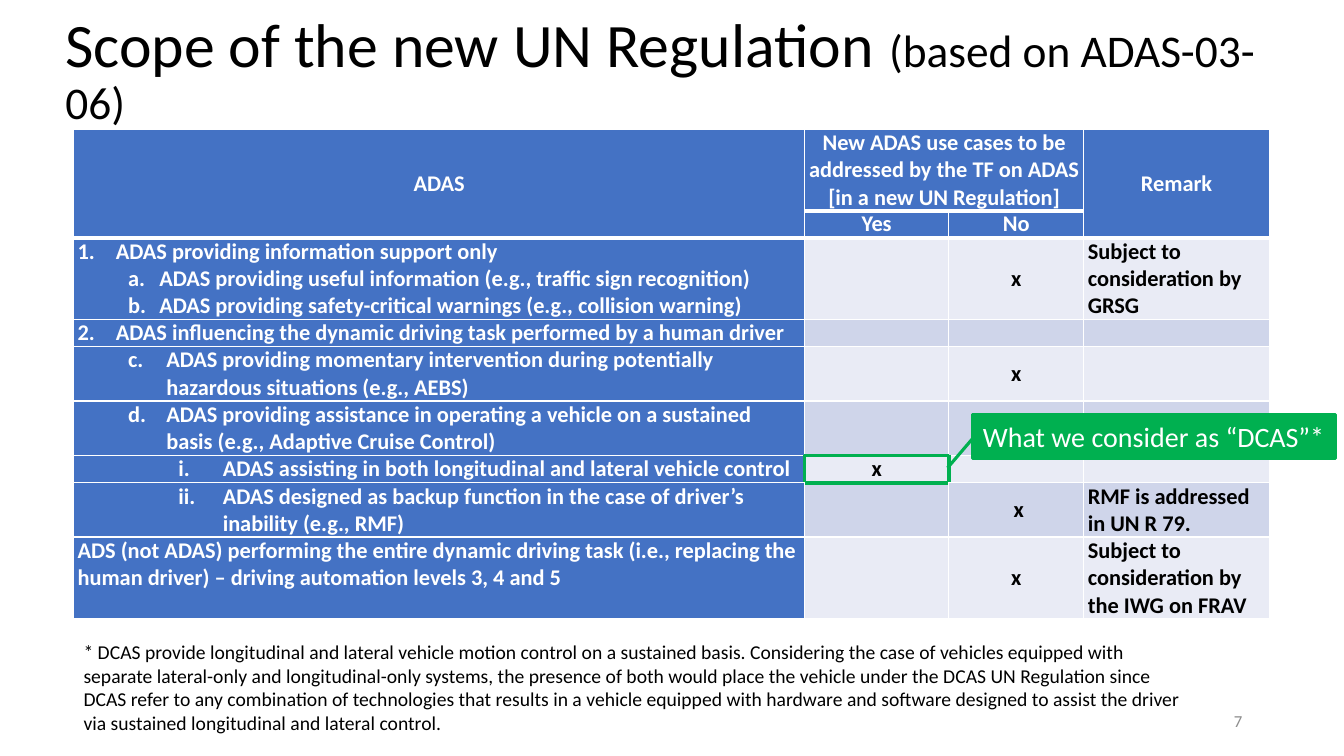
from lxml.etree import SubElement
from pptx import Presentation
from pptx.dml.color import RGBColor
from pptx.enum.shapes import MSO_SHAPE
from pptx.enum.text import MSO_ANCHOR, PP_ALIGN
from pptx.oxml.ns import qn
from pptx.util import Emu, Pt

EMU_PER_PX = 9144  # 100 px to the inch
WHITE, BLACK, BLUE, GREEN = "FFFFFF", "000000", "4472C4", "00B050"
BANDS = ("E9EBF5", "CFD5EA")
LINE_HEIGHT = 27
MIDDLE, TOP = MSO_ANCHOR.MIDDLE, MSO_ANCHOR.TOP

COLUMNS = (725, 143, 134, 184)
LINES_PER_ROW = (3, 1, 3, 1, 2, 2, 1, 2, 3)
HEADER = (
    ("ADAS", "New ADAS use cases to be addressed by the TF on ADAS [in a new UN Regulation]", "", "Remark"),
    ("", "Yes", "No", ""),
)
MERGES = (((0, 0), (1, 0)), ((0, 1), (0, 2)), ((0, 3), (1, 3)))

# Numbering: scheme, level, left indent, hanging indent
NUMBER = ("arabicPeriod", 0, 38, 38)
LETTER = ("alphaLcPeriod", 1, 81, 31)
WIDE_LETTER = ("alphaLcPeriod", 1, 88, 38)
ROMAN = ("romanLcPeriod", 2, 144, 44)

# Each row: (numbering, start, text) items, yes, no, remark
USE_CASES = (
    ([(NUMBER, 1, "ADAS providing information support only"),
      (LETTER, 1, "ADAS providing useful information (e.g., traffic sign recognition)"),
      (LETTER, 1, "ADAS providing safety-critical warnings (e.g., collision warning)")],
     "", "x", "Subject to consideration by GRSG"),
    ([(NUMBER, 2, "ADAS influencing the dynamic driving task performed by a human driver")], "", "", ""),
    ([(WIDE_LETTER, 3, "ADAS providing momentary intervention during potentially hazardous situations "
       "(e.g., AEBS)")], "", "x", ""),
    ([(WIDE_LETTER, 4, "ADAS providing assistance in operating a vehicle on a sustained basis "
       "(e.g., Adaptive Cruise Control)")], "", "", ""),
    ([(ROMAN, 1, "ADAS assisting in both longitudinal and lateral vehicle control")], "x", "", ""),
    ([(ROMAN, 2, "ADAS designed as backup function in the case of driver’s inability (e.g., RMF)")],
     "", " x", "RMF is addressed in UN R 79."),
    ([(None, 1, "ADS (not ADAS) performing the entire dynamic driving task (i.e., replacing the human "
       "driver) – driving automation levels 3, 4 and 5")],
     "", "x", "Subject to consideration by the IWG on FRAV"),
)
# Sides drawn green around the DCAS cell, by (row, column)
GREEN_SIDES = {(5, 1): "B", (6, 0): "R", (6, 1): "LRTB", (6, 2): "L", (7, 1): "T"}

FOOTNOTE = (
    "* DCAS provide longitudinal and lateral vehicle motion control on a sustained basis. "
    "Considering the case of vehicles equipped with separate lateral-only and longitudinal-only "
    "systems, the presence of both would place the vehicle under the DCAS UN Regulation since DCAS "
    "refer to any combination of technologies that results in a vehicle equipped with hardware and "
    "software designed to assist the driver via sustained longitudinal and lateral control."
)


def px(length):
    return Emu(length * EMU_PER_PX)


def color(hex_string):
    return RGBColor.from_string(hex_string)


def set_all(target, values):
    for name, value in values.items():
        setattr(target, name, value)


class SlideBuilder:
    def __init__(self, slide, font_name="Calibri"):
        self.slide = slide
        self.font_name = font_name

    def run(self, paragraph, text, size, hex_color, bold=False):
        run = paragraph.add_run()
        run.text = text
        set_all(run.font, {"name": self.font_name, "size": Pt(size), "bold": bold})
        run.font.color.rgb = color(hex_color)

    def text(self, box, runs, anchor=MIDDLE, align=PP_ALIGN.LEFT, spacing=None):
        """Put (text, size, color) runs into one paragraph of a shape."""
        box = self.slide.shapes.add_textbox(*map(px, box)) if isinstance(box, tuple) else box
        set_all(box.text_frame, {"word_wrap": True, "vertical_anchor": anchor})
        paragraph = box.text_frame.paragraphs[0]
        set_all(paragraph, {"alignment": align, "line_spacing": spacing})
        for run in runs:
            self.run(paragraph, *run)

    def box(self, kind, box, fill, runs, line=None, adjustments=()):
        shape = self.slide.shapes.add_shape(kind, *map(px, box))
        shape.shadow.inherit = False
        shape.fill.solid()
        shape.fill.fore_color.rgb = color(fill)
        if line:
            shape.line.color.rgb = color(line)
            shape.line.width = Pt(2.25)
        else:
            shape.line.fill.background()
        for index, value in enumerate(adjustments):
            shape.adjustments[index] = value
        self.text(shape, runs, anchor=TOP)

    def table(self, left, top, columns, row_heights):
        frame = self.slide.shapes.add_table(
            len(row_heights), len(columns), px(left), px(top), px(sum(columns)), px(sum(row_heights)))
        for column, width in zip(frame.table.columns, columns):
            column.width = px(width)
        for row, height in zip(frame.table.rows, row_heights):
            row.height = px(height)
        return frame.table

    def cell(self, cell, items, fill, hex_color, borders, anchor=MIDDLE, align=PP_ALIGN.CENTER):
        """Fill a cell with (numbering, start, text) items and draw its four borders."""
        set_all(cell, {"margin_left": px(4), "margin_right": px(4), "margin_top": 0,
                       "margin_bottom": 0, "vertical_anchor": anchor})
        for side, (line_color, width) in borders.items():
            line = SubElement(cell._tc.tcPr, qn(f"a:ln{side}"), w=str(Pt(width)))
            SubElement(SubElement(line, qn("a:solidFill")), qn("a:srgbClr"), val=line_color)
        cell.fill.solid()
        cell.fill.fore_color.rgb = color(fill)
        frame = cell.text_frame
        for index, (numbering, start, text) in enumerate(items):
            paragraph = frame.add_paragraph() if index else frame.paragraphs[0]
            paragraph.alignment = align
            if numbering:
                self.number(paragraph, start, *numbering)
            if text:
                self.run(paragraph, text, 16, hex_color, bold=True)
            else:
                SubElement(paragraph._p, qn("a:endParaRPr"), sz="1600")

    def number(self, paragraph, start, scheme, level, indent, hanging):
        paragraph.level = level
        properties = paragraph._p.get_or_add_pPr()
        properties.set("marL", str(px(indent)))
        properties.set("indent", str(px(-hanging)))
        SubElement(properties, qn("a:buFont"), typeface="+mj-lt")
        SubElement(properties, qn("a:buAutoNum"), type=scheme, startAt=str(start))


def cell_borders(row, column):
    borders = {side: (WHITE, 1) for side in "LRTB"}
    if row < len(HEADER):
        borders["B"] = (WHITE, 3)
    for side in GREEN_SIDES.get((row, column), ""):
        borders[side] = (GREEN, 3)
    return borders


def add_scope_table(builder):
    table = builder.table(73, 128, COLUMNS, [lines * LINE_HEIGHT for lines in LINES_PER_ROW])
    for first, last in MERGES:
        table.cell(*first).merge(table.cell(*last))
    for row, values in enumerate(HEADER + USE_CASES):
        for column, value in enumerate(values):
            items = value if isinstance(value, list) else [(None, 1, value)]
            style = {"fill": BLUE, "hex_color": WHITE}
            if row >= len(HEADER):
                if column:
                    style = {"fill": BANDS[row % 2], "hex_color": BLACK}
                if column in (0, 3):
                    style.update(anchor=TOP, align=PP_ALIGN.LEFT)
            builder.cell(table.cell(row, column), items, borders=cell_borders(row, column), **style)


def main():
    presentation = Presentation()
    set_all(presentation, {"slide_width": px(1333), "slide_height": px(750)})
    builder = SlideBuilder(presentation.slides.add_slide(presentation.slide_layouts[6]))
    builder.text((55, 32, 1244, 78), [("Scope of the new UN Regulation ", 44.1, BLACK),
                                      ("(based on ADAS-03-06)", 32.4, BLACK)], spacing=0.9)
    builder.text((942, 695, 300, 40), [("7", 12, "8C8C8C")], align=PP_ALIGN.RIGHT)
    add_scope_table(builder)
    builder.box(MSO_SHAPE.LINE_CALLOUT_1, (965, 411, 360, 44), GREEN,
                [("What we consider as “DCAS”*", 20, WHITE)], line=GREEN,
                adjustments=(0.54, 0, 1.21, -0.07))
    builder.box(MSO_SHAPE.RECTANGLE, (73, 630, 1108, 104), WHITE, [(FOOTNOTE, 14, BLACK)])
    presentation.save("out.pptx")


if __name__ == "__main__":
    main()
